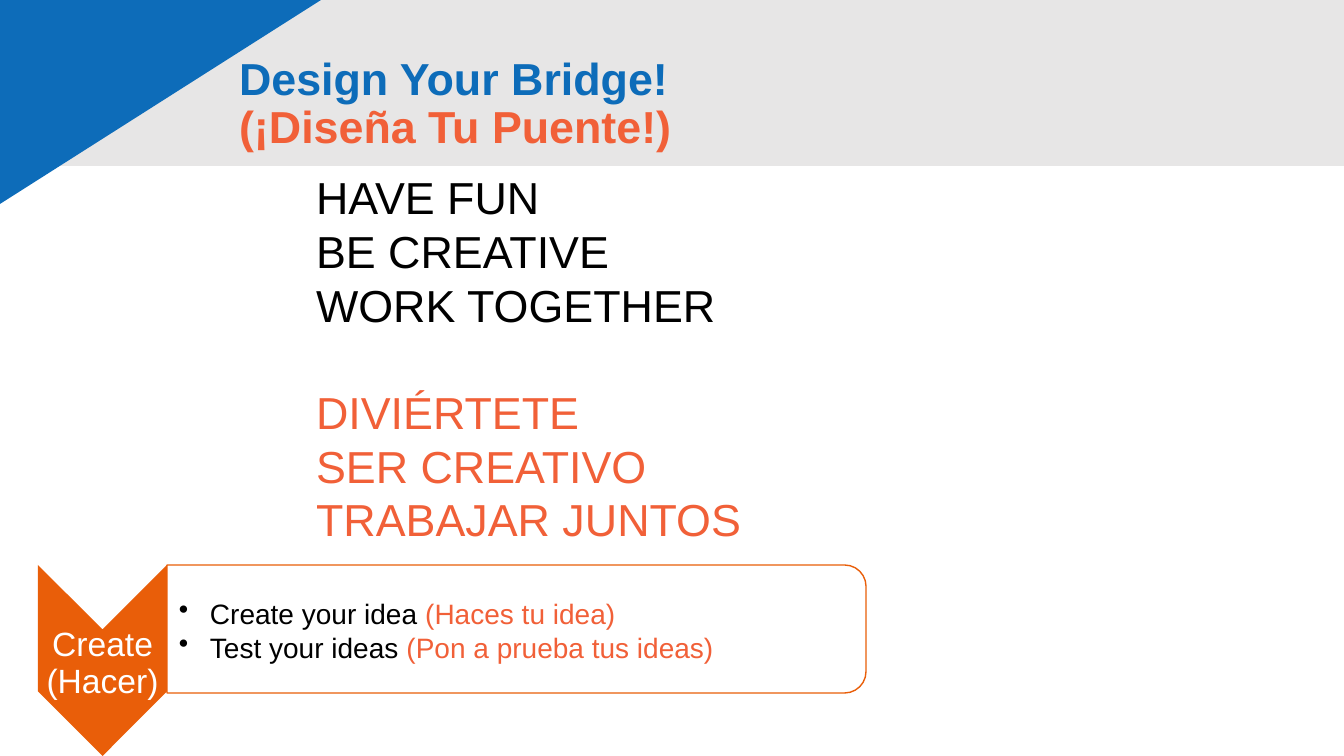
import dataclasses

import pptx
import pptx.dml.color
import pptx.enum.shapes
import pptx.enum.text
import pptx.oxml.xmlchemy
import pptx.util
import lxml.etree

EMU_PER_PX = 12192000 / 1344
PAGE_WIDTH, PAGE_HEIGHT = 1344, 756
SHAPES = pptx.enum.shapes.MSO_SHAPE
ALIGN = pptx.enum.text.PP_ALIGN
ANCHOR = pptx.enum.text.MSO_ANCHOR
DRAWING = "{http://schemas.openxmlformats.org/drawingml/2006/main}"


@dataclasses.dataclass(frozen=True)
class Theme:
    font: str = "Arial"
    blue: str = "0D6CB9"
    spanish: str = "F16038"
    orange: str = "E95E09"
    grey: str = "E7E6E6"
    black: str = "000000"
    white: str = "FFFFFF"
    heading: int = 32
    label: int = 24
    bullet: int = 20


THEME = Theme()


def px(length):
    return pptx.util.Emu(round(length * EMU_PER_PX))


def color(code):
    return pptx.dml.color.RGBColor.from_string(code)


def place(box, left, top, width, height):
    box.left, box.top, box.width, box.height = map(px, (left, top, width, height))


def add_shape(page, kind, left, top, width, height, fill, line=None, turned=False):
    if turned:
        left, top = left + (width - height) / 2, top + (height - width) / 2
        width, height = height, width
    shape = page.shapes.add_shape(kind, *map(px, (left, top, width, height)))
    shape.rotation = 90 if turned else 0
    shape.shadow.inherit = False
    shape.fill.solid()
    shape.fill.fore_color.rgb = color(fill)
    if line:
        shape.line.color.rgb = color(line)
        shape.line.width = pptx.util.Pt(1)
    else:
        shape.line.fill.background()


def prepare_frame(box, anchor, insets=None):
    frame = box.text_frame
    frame.word_wrap = True
    frame.auto_size = pptx.enum.text.MSO_AUTO_SIZE.NONE
    frame.vertical_anchor = anchor
    if insets:
        (frame.margin_left, frame.margin_top,
         frame.margin_right, frame.margin_bottom) = map(px, insets)
    return frame


def add_text_box(page, left, top, width, height, insets):
    box = page.shapes.add_textbox(*map(px, (left, top, width, height)))
    return prepare_frame(box, ANCHOR.MIDDLE, insets)


def next_para(frame, index):
    return frame.paragraphs[0] if index == 0 else frame.add_paragraph()


def set_bullet(para, indent=0, mark=None):
    properties = para._p.get_or_add_pPr()
    properties.set("marL", str(px(indent)))
    properties.set("indent", str(px(-indent)))
    if mark:
        lxml.etree.SubElement(properties, DRAWING + "buChar", char=mark)
    else:
        lxml.etree.SubElement(properties, DRAWING + "buNone")


def set_font(para, size, code=None, bold=False):
    para.font.name = THEME.font
    para.font.size = pptx.util.Pt(size)
    para.font.bold = bold
    if code:
        para.font.color.rgb = color(code)


def add_span(para, text, code):
    span = para.add_run()
    span.text = text
    span.font.color.rgb = color(code)


def write_title(title):
    place(title, 229, 32, 978, 146)
    para = prepare_frame(title, ANCHOR.MIDDLE).paragraphs[0]
    para.alignment = ALIGN.LEFT
    para.line_spacing = 0.9
    set_font(para, THEME.heading, bold=True)
    add_span(para, "Design Your Bridge!", THEME.blue)
    para.add_line_break()
    add_span(para, "(¡Diseña Tu Puente!)", THEME.spanish)


def write_goals(body, groups):
    place(body, 306, 165, 783, 445)
    frame = prepare_frame(body, ANCHOR.TOP)
    goals = [(goal, code, place_in_group == 0)
             for code, group in groups
             for place_in_group, goal in enumerate(group)]
    for index, (goal, code, opens_group) in enumerate(goals):
        para = next_para(frame, index)
        para.text = goal
        set_bullet(para)
        para.space_before = pptx.util.Pt(38 if index and opens_group else 0)
        set_font(para, THEME.heading, code)


def write_steps(page, steps):
    frame = add_text_box(page, 167, 572, 692, 116, (12, 1, 1, 1))
    for index, (english, spanish) in enumerate(steps):
        para = next_para(frame, index)
        set_bullet(para, 31, "•")
        set_font(para, THEME.bullet)
        add_span(para, english + " ", THEME.black)
        add_span(para, spanish, THEME.spanish)


def write_label(page, text):
    para = add_text_box(page, 38, 630, 129, 68, (2, 2, 2, 2)).paragraphs[0]
    para.text = text
    para.alignment = ALIGN.CENTER
    para.line_spacing = 0.9
    set_font(para, THEME.label, THEME.white)


def main():
    deck = pptx.Presentation()
    deck.slide_width, deck.slide_height = px(PAGE_WIDTH), px(PAGE_HEIGHT)
    page = deck.slides.add_slide(deck.slide_layouts[1])
    title, body = page.placeholders

    add_shape(page, SHAPES.RECTANGLE, 0, 0, PAGE_WIDTH, 166, THEME.grey)
    add_shape(page, SHAPES.RIGHT_TRIANGLE, 0, 0, 321, 204, THEME.blue, turned=True)
    for placeholder in (title, body):
        page.shapes._spTree.append(placeholder._element)

    write_title(title)
    write_goals(body, [
        (THEME.black, ["HAVE FUN", "BE CREATIVE", "WORK TOGETHER"]),
        (THEME.spanish, ["DIVIÉRTETE", "SER CREATIVO", "TRABAJAR JUNTOS"]),
    ])
    add_shape(page, SHAPES.ROUND_2_SAME_RECTANGLE, 167, 565, 699, 128,
              THEME.white, THEME.orange, turned=True)
    write_steps(page, [
        ("Create your idea", "(Haces tu idea)"),
        ("Test your ideas", "(Pon a prueba tus ideas)"),
    ])
    add_shape(page, SHAPES.CHEVRON, 38, 565, 129, 191, THEME.orange, turned=True)
    write_label(page, "Create (Hacer)")
    deck.save("out.pptx")


if __name__ == "__main__":
    main()
